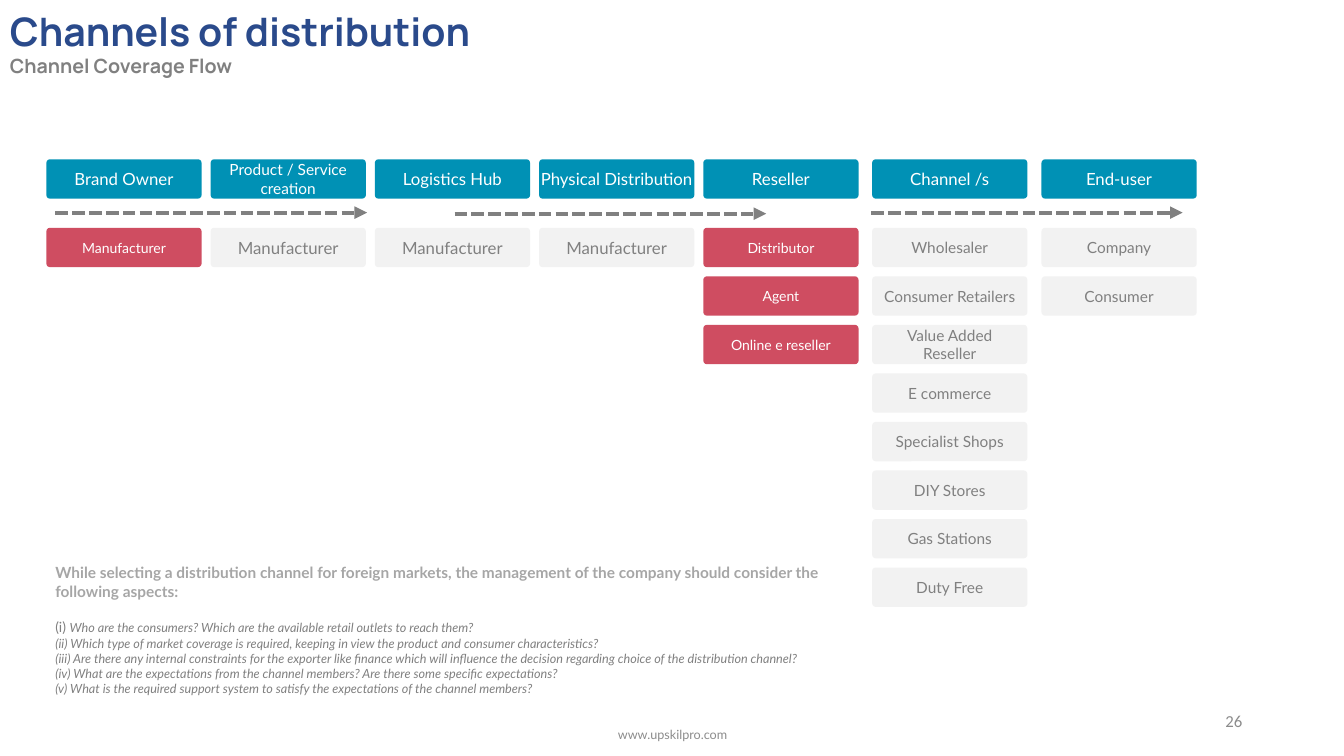
from dataclasses import dataclass

from lxml.etree import SubElement
from pptx import Presentation
from pptx.dml.color import RGBColor
from pptx.enum.dml import MSO_LINE
from pptx.enum.shapes import MSO_CONNECTOR, MSO_SHAPE
from pptx.enum.text import MSO_ANCHOR, PP_ALIGN
from pptx.oxml.ns import qn
from pptx.util import Inches, Pt


@dataclass(frozen=True)
class Theme:
    body_font: str = "Lato"
    title_font: str = "Manrope"
    number_font: str = "Calibri"
    teal: str = "0091B5"
    red: str = "CF4D61"
    pale: str = "F2F2F2"
    white: str = "FFFFFF"
    navy: str = "2A4A8B"
    gray: str = "808080"
    light_gray: str = "A6A6A6"
    footer_gray: str = "8C8C8C"
    title_size: float = 28
    subtitle_size: float = 14
    large_size: float = 12
    medium_size: float = 11
    small_size: float = 10
    note_size: float = 9
    arrow_width: float = 3


class ChannelSlide:
    """Draws the channel grid and its texts, with lengths in percent of the slide."""

    box_width, box_height = 11.55, 5.2
    header_top, first_row_top, row_pitch = 21.07, 30.13, 6.42

    def __init__(self, presentation, theme):
        self.presentation = presentation
        self.theme = theme
        self.slide = presentation.slides.add_slide(presentation.slide_layouts[6])

    def across(self, share):
        return round(self.presentation.slide_width * share / 100)

    def down(self, share):
        return round(self.presentation.slide_height * share / 100)

    def area(self, left, top, width, height):
        return self.across(left), self.down(top), self.across(width), self.down(height)

    def column_left(self, column):
        return 3.45 + 12.22 * column if column < 5 else 64.89 + 12.6 * (column - 5)

    def style(self, run, size, color, font=None, bold=False, italic=False):
        run.font.name = font or self.theme.body_font
        run.font.size = Pt(size)
        run.font.color.rgb = RGBColor.from_string(color)
        run.font.bold = bold
        run.font.italic = italic

    def box(self, column, top, text, size, fill, color, padded=True):
        area = self.area(self.column_left(column), top, self.box_width, self.box_height)
        shape = self.slide.shapes.add_shape(MSO_SHAPE.ROUNDED_RECTANGLE, *area)
        shape.adjustments[0] = 0.09
        shape.shadow.inherit = False
        shape.fill.solid()
        shape.fill.fore_color.rgb = RGBColor.from_string(fill)
        shape.line.fill.background()
        frame = shape.text_frame
        frame.word_wrap = True
        frame.vertical_anchor = MSO_ANCHOR.MIDDLE
        if not padded:
            frame.margin_left = frame.margin_right = 0
            frame.margin_top = frame.margin_bottom = 0
        frame.text = text
        paragraph = frame.paragraphs[0]
        paragraph.alignment = PP_ALIGN.CENTER
        self.style(paragraph.runs[0], size, color)

    def header(self, column, text, size):
        self.box(column, self.header_top, text, size, self.theme.teal, self.theme.white, False)

    def member(self, column, row, text, size, highlighted):
        theme = self.theme
        fill, color = (theme.red, theme.white) if highlighted else (theme.pale, theme.gray)
        self.box(column, self.first_row_top + self.row_pitch * row, text, size, fill, color)

    def text(self, area, lines, alignment=PP_ALIGN.LEFT, anchor=MSO_ANCHOR.TOP):
        frame = self.slide.shapes.add_textbox(*self.area(*area)).text_frame
        frame.word_wrap = True
        frame.vertical_anchor = anchor
        frame.text = "\n".join(line for line, _ in lines)
        for paragraph, (_, options) in zip(frame.paragraphs, lines):
            paragraph.alignment = alignment
            self.style(paragraph.runs[0], **options)
        return frame

    def arrow(self, left, top, length=23.18):
        start, end, height = self.across(left), self.across(left + length), self.down(top)
        connector = self.slide.shapes.add_connector(
            MSO_CONNECTOR.STRAIGHT, start, height, end, height)
        connector.line.color.rgb = RGBColor.from_string(self.theme.gray)
        connector.line.width = Pt(self.theme.arrow_width)
        connector.line.dash_style = MSO_LINE.SQUARE_DOT
        properties = connector.line._get_or_add_ln()
        SubElement(properties, qn("a:tailEnd"), type="triangle")
        SubElement(connector._element.spPr, qn("a:effectLst"))


def main():
    theme = Theme()
    presentation = Presentation()
    presentation.slide_width = Inches(13.33)
    presentation.slide_height = Inches(7.5)
    page = ChannelSlide(presentation, theme)

    large, medium, small = theme.large_size, theme.medium_size, theme.small_size
    stages = [
        ("Brand Owner", large, ["Manufacturer"], small, True),
        ("Product / Service creation", medium, ["Manufacturer"], large, False),
        ("Logistics Hub", large, ["Manufacturer"], large, False),
        ("Physical Distribution", large, ["Manufacturer"], large, False),
        ("Reseller", large, ["Distributor", "Agent", "Online e reseller"], small, True),
        ("Channel /s", large,
         ["Wholesaler", "Consumer Retailers", "Value Added Reseller", "E commerce",
          "Specialist Shops", "DIY Stores", "Gas Stations", "Duty Free"], medium, False),
        ("End-user", large, ["Company", "Consumer"], medium, False),
    ]
    for column, (title, title_size, members, size, highlighted) in enumerate(stages):
        page.header(column, title, title_size)
        for row, member in enumerate(members):
            page.member(column, row, member, size, highlighted)

    for left, top in [(4.13, 28.13), (33.83, 28.27), (64.82, 28.13)]:
        page.arrow(left, top)

    page.text((0, 0.27, 43.44, 10.8), [
        ("Channels of distribution", dict(
            size=theme.title_size, color=theme.navy, font=theme.title_font, bold=True)),
        ("Channel Coverage Flow", dict(
            size=theme.subtitle_size, color=theme.gray, font=theme.title_font, bold=True)),
    ])

    question = dict(size=theme.note_size, color=theme.gray, italic=True)
    aspects = page.text((3.38, 73.87, 60.54, 19.47), [
        ("While selecting a distribution channel for foreign markets, the management of the "
         "company should consider the following aspects:",
         dict(size=medium, color=theme.light_gray, bold=True)),
        ("(i) ", dict(size=small, color=theme.gray)),
        ("(ii) Which type of market coverage is required, keeping in view the product and "
         "consumer characteristics?", question),
        ("(iii) Are there any internal constraints for the exporter like finance which will "
         "influence the decision regarding choice of the distribution channel?", question),
        ("(iv) What are the expectations from the channel members? Are there some specific "
         "expectations?", question),
        ("(v) What is the required support system to satisfy the expectations of the channel "
         "members?", question),
    ])
    first_question = aspects.paragraphs[1]
    first_question.space_before = Pt(13.2)
    run = first_question.add_run()
    run.text = "Who are the consumers? Which are the available retail outlets to reach them?"
    page.style(run, **question)

    page.text((70.67, 92.67, 22.5, 5.33), [
        ("26", dict(size=large, color=theme.footer_gray, font=theme.number_font)),
    ], PP_ALIGN.RIGHT, MSO_ANCHOR.MIDDLE)
    page.text((33.16, 94.53, 33.76, 5.33), [
        ("www.upskilpro.com", dict(size=theme.note_size, color=theme.footer_gray)),
    ], PP_ALIGN.CENTER, MSO_ANCHOR.MIDDLE)

    presentation.save("out.pptx")


if __name__ == "__main__":
    main()
